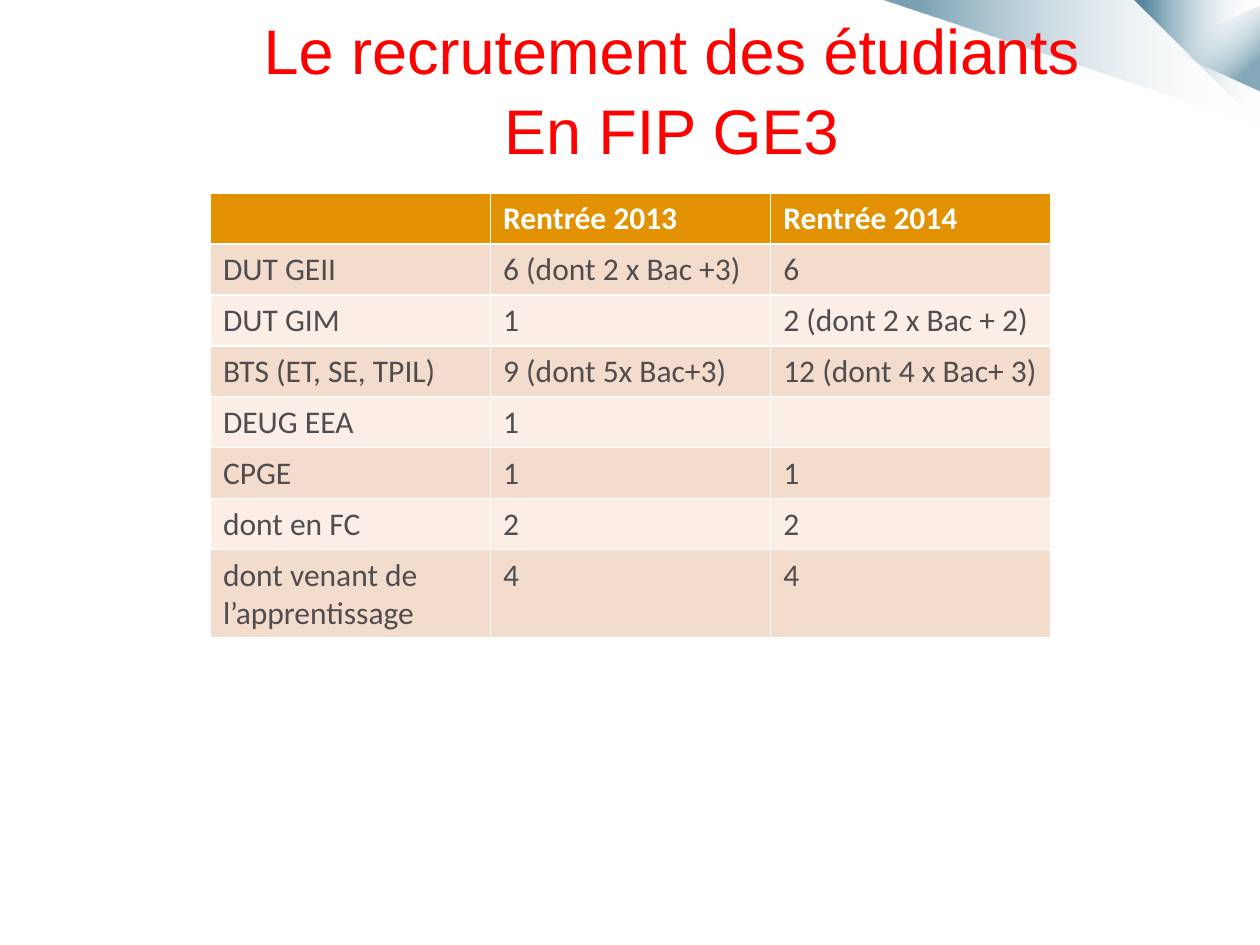
from lxml.etree import SubElement
from pptx import Presentation
from pptx.dml.color import RGBColor
from pptx.enum.shapes import MSO_SHAPE
from pptx.enum.text import MSO_ANCHOR, PP_ALIGN
from pptx.oxml.ns import qn
from pptx.util import Inches, Pt

TITLE = ["Le recrutement des étudiants", "En FIP GE3"]
ROWS = [
    ("", "Rentrée 2013", "Rentrée 2014"),
    ("DUT GEII", "6 (dont 2 x Bac +3)", "6"),
    ("DUT GIM", "1", "2 (dont 2 x Bac + 2)"),
    ("BTS (ET, SE, TPIL)", "9 (dont 5x Bac+3)", "12 (dont 4 x Bac+ 3)"),
    ("DEUG EEA", "1", ""),
    ("CPGE", "1", "1"),
    ("dont en FC", "2", "2"),
    ("dont venant de l’apprentissage", "4", "4"),
]
HEADER_FILL = "E29100"
BAND_FILLS = ["FAEEE7", "F4DCCC"]
BEAMS = [
    ([(10, 1.47), (6.79, 0), (10, 0)], 53),
    ([(10, 0.6), (9, 0.14), (9.29, 0), (10, 0)], 63),
]


def color(value):
    """Return the colour for a hex string."""
    return RGBColor.from_string(value)


def fade(shape, stops, angle):
    """Fill a shape with a gradient of (position, colour, opacity) stops."""
    shape.shadow.inherit = False
    shape.line.fill.background()
    shape.fill.gradient()
    gradient = shape._element.spPr.find(qn("a:gradFill"))
    for child in list(gradient):
        gradient.remove(child)
    stop_list = SubElement(gradient, qn("a:gsLst"))
    for position, value, opacity in stops:
        stop = SubElement(stop_list, qn("a:gs"), pos=str(position * 1000))
        solid = SubElement(stop, qn("a:srgbClr"), val=value)
        SubElement(solid, qn("a:alpha"), val=str(opacity * 1000))
    SubElement(gradient, qn("a:lin"), ang=str(angle * 60000), scaled="0")


def write(paragraph, text, font="Calibri", size=18, fill="4F4D50", bold=False, align=None):
    """Write formatted text into a paragraph."""
    paragraph.alignment = align
    run = paragraph.add_run()
    run.text = text
    run.font.name = font
    run.font.size = Pt(size)
    run.font.bold = bold
    run.font.color.rgb = color(fill)


def add_decoration(slide):
    """Draw the fading beams in the top right corner."""
    for points, opacity in BEAMS:
        builder = slide.shapes.build_freeform(*points[0], scale=Inches(1))
        builder.add_line_segments(points[1:], close=True)
        fade(builder.convert_to_shape(), [(1, "FFFFFF", 0), (91, "004D6F", opacity)], 180)
    triangle = slide.shapes.add_shape(
        MSO_SHAPE.ISOSCELES_TRIANGLE, Inches(9.29), Inches(0.01), Inches(0.68), Inches(0.75))
    triangle.rotation = 270
    fade(triangle, [(27, "FFFFFF", 0), (81, "004D6F", 48)], 135)


def add_title(slide):
    """Add the two-line title."""
    box = slide.shapes.add_textbox(Inches(0.98), Inches(0.29), Inches(8.2), Inches(0.8))
    frame = box.text_frame
    frame.word_wrap = True
    frame.vertical_anchor = MSO_ANCHOR.MIDDLE
    for index, line in enumerate(TITLE):
        paragraph = frame.add_paragraph() if index else frame.paragraphs[0]
        paragraph.line_spacing = 1.06
        paragraph._p.get_or_add_pPr().set("marL", str(Inches(0.5)))
        write(paragraph, line, font="Arial", size=36, fill="FF0000", align=PP_ALIGN.CENTER)


def add_recruitment_table(slide):
    """Add the recruitment table with banded rows."""
    table = slide.shapes.add_table(
        len(ROWS), len(ROWS[0]), Inches(1.67), Inches(1.53), Inches(6.67), Inches(3.24)).table
    for row_index, row in enumerate(ROWS):
        header = row_index == 0
        for column_index, text in enumerate(row):
            cell = table.cell(row_index, column_index)
            cell.fill.solid()
            cell.fill.fore_color.rgb = color(HEADER_FILL if header else BAND_FILLS[row_index % 2])
            if text:
                write(cell.text_frame.paragraphs[0], text, bold=header,
                      fill="FFFFFF" if header else "4F4D50")


def main():
    """Build and save the slide."""
    presentation = Presentation()
    presentation.slide_width = Inches(10)
    presentation.slide_height = Inches(7.5)
    slide = presentation.slides.add_slide(presentation.slide_layouts[6])
    add_decoration(slide)
    add_title(slide)
    add_recruitment_table(slide)
    presentation.save("out.pptx")


if __name__ == "__main__":
    main()
